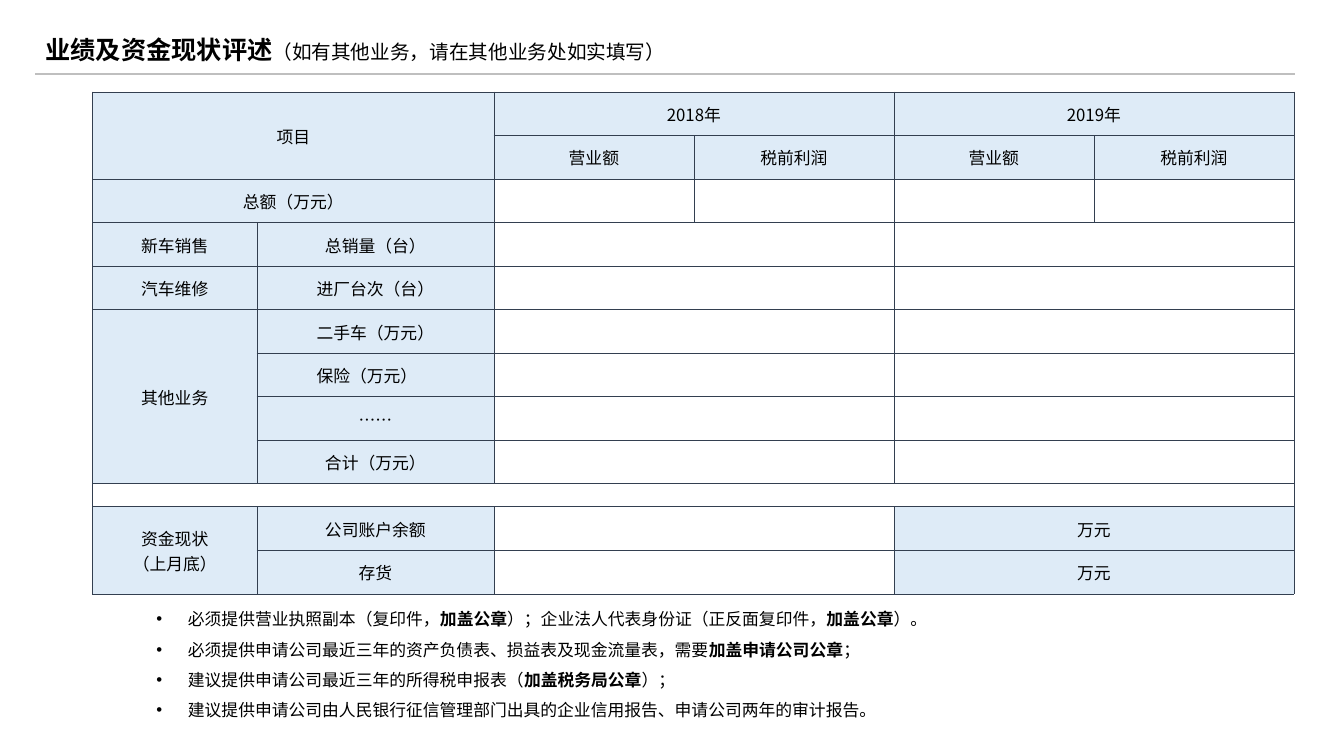
"""Build the slide on business results and funds."""
from typing import Any, NamedTuple

from lxml.etree import SubElement
from pptx import Presentation
from pptx.dml.color import RGBColor
from pptx.enum.shapes import MSO_CONNECTOR
from pptx.enum.text import MSO_ANCHOR, MSO_AUTO_SIZE, PP_ALIGN
from pptx.oxml.ns import qn
from pptx.util import Pt

LINE = MSO_CONNECTOR.STRAIGHT
MID, TOP = MSO_ANCHOR.MIDDLE, MSO_ANCHOR.TOP
LEFT, MIDDLE = PP_ALIGN.LEFT, PP_ALIGN.CENTER
GROW = MSO_AUTO_SIZE.SHAPE_TO_FIT_TEXT
SCALE = 914400 // 250
FONT = "Noto Sans CJK SC"
HUES = {"text": "000000", "rule": "BFBFBF", "edge": "333F50",
        "label": "DEEBF7", "blank": "FFFFFF"}
COLS = [407, 588] + [496] * 4
ROWS = [108] * 9 + [57] + [108] * 2
GAP = 9


class Part(NamedTuple):
    """A stretch of text in one format."""
    text: str
    bold: bool = False
    size: int = 12


class Label(NamedTuple):
    """A shaded table cell and the grid it spans."""
    row: int
    col: int
    text: str
    down: int = 1
    wide: int = 1


class Box(NamedTuple):
    """A place on the slide in px."""
    left: int
    top: int
    width: int
    height: int


LABELS = [
    Label(0, 0, "项目", 2, 2),
    Label(0, 2, "2018年", 1, 2),
    Label(0, 4, "2019年", 1, 2),
    *(Label(1, col, text) for col, text in
      enumerate(["营业额", "税前利润"] * 2, 2)),
    Label(2, 0, "总额（万元）", 1, 2),
    Label(3, 0, "新车销售"),
    Label(4, 0, "汽车维修"),
    Label(5, 0, "其他业务", 4),
    *(Label(row, 1, text) for row, text in enumerate(
        ["总销量（台）", "进厂台次（台）", "二手车（万元）", "保险（万元）　",
         "……", "合计（万元）"], 3)),
    Label(10, 0, "资金现状\n（上月底）", 2),
    Label(10, 1, "公司账户余额"),
    Label(11, 1, "存货"),
    *(Label(row, 4, "万元", 1, 2) for row in (10, 11)),
]
TITLE = [Part("业绩及资金现状评述", True, 18),
         Part("（如有其他业务，请在其他业务处如实填写）", size=14)]
NOTES = [
    [Part("必须提供营业执照副本（复印件，"), Part("加盖公章", True),
     Part("）；企业法人代表身份证（正反面复印件，"),
     Part("加盖公章", True), Part("）。")],
    [Part("必须提供申请公司最近三年的资产负债表、损益表及现金流量表，需要"),
     Part("加盖申请公司公章", True), Part("；")],
    [Part("建议提供申请公司最近三年的所得税申报表（"),
     Part("加盖税务局公章", True), Part("）；")],
    [Part("建议提供申请公司由人民银行征信管理部门出具的企业信用报告、"
          "申请公司两年的审计报告。")],
]


def emu(px: int) -> int:
    """Turn px into EMU."""
    return px * SCALE


def style(item: Any, **form: Any) -> None:
    """Set each format value on an item."""
    for name, value in form.items():
        setattr(item, name, value)


def write(para: Any, parts: list[Part]) -> None:
    """Add formatted runs to a paragraph."""
    for part in parts:
        run = para.add_run()
        run.text = part.text
        style(run.font, name=FONT, size=Pt(part.size), bold=part.bold)
        run.font.color.rgb = RGBColor.from_string(HUES["text"])
        SubElement(run.font._element, qn("a:ea"), typeface=FONT)


def place(shape: Any, box: Box, anchor: Any) -> Any:
    """Move a placeholder and return its text frame."""
    style(shape, **{name: emu(px) for name, px in box._asdict().items()})
    frame = shape.text_frame
    style(frame, word_wrap=True, vertical_anchor=anchor, auto_size=GROW)
    return frame


def list_notes(frame: Any) -> None:
    """Fill the bulleted list."""
    for num, parts in enumerate(NOTES):
        para = frame.add_paragraph() if num else frame.paragraphs[0]
        style(para, level=1, alignment=LEFT, line_spacing=1.5,
              space_before=Pt(0), space_after=Pt(0))
        props = para._p.get_or_add_pPr()
        props.set("marL", str(emu(203)))
        props.set("indent", str(emu(-78)))
        SubElement(props, qn("a:buFont"), typeface="Arial")
        SubElement(props, qn("a:buChar"), char="•")
        write(para, parts)


def fill_cell(cell: Any, hue: str) -> None:
    """Give a cell its fill, edges and margins."""
    style(cell, vertical_anchor=MID, margin_left=emu(2), margin_right=emu(2),
          margin_top=emu(2), margin_bottom=0)
    props = cell._tc.get_or_add_tcPr()
    for side in "LRTB":
        edge = SubElement(props, qn(f"a:ln{side}"), w=str(Pt(0.5)))
        fill = SubElement(edge, qn("a:solidFill"))
        SubElement(fill, qn("a:srgbClr"), val=HUES["edge"])
    cell.fill.solid()
    cell.fill.fore_color.rgb = RGBColor.from_string(HUES[hue])


def add_grid(slide: Any) -> None:
    """Draw the table of results and funds."""
    box = Box(230, 228, sum(COLS), sum(ROWS))
    table = slide.shapes.add_table(
        len(ROWS), len(COLS), *map(emu, box)).table
    style(table, first_row=False, horz_banding=False)
    for col, width in zip(table.columns, COLS):
        col.width = emu(width)
    for row, height in zip(table.rows, ROWS):
        row.height = emu(height)
    spots = {(lab.row + down, lab.col + wide) for lab in LABELS
             for down in range(lab.down) for wide in range(lab.wide)}
    for row in range(len(ROWS)):
        for col in range(len(COLS)):
            cell = table.cell(row, col)
            fill_cell(cell, "label" if (row, col) in spots else "blank")
            if (row, col) not in spots:
                para = cell.text_frame.paragraphs[0]
                SubElement(para._p, qn("a:endParaRPr"), sz="800")
    for lab in LABELS:
        cell = table.cell(lab.row, lab.col)
        if lab.down * lab.wide > 1:
            cell.merge(table.cell(lab.row + lab.down - 1,
                                  lab.col + lab.wide - 1))
        for num, text in enumerate(lab.text.split("\n")):
            frame = cell.text_frame
            para = frame.add_paragraph() if num else frame.paragraphs[0]
            para.alignment = MIDDLE
            write(para, [Part(text)])
    table.cell(GAP, 0).merge(table.cell(GAP, len(COLS) - 1))
    for row in range(3, len(ROWS)):
        for col in (2, 4):
            if row != GAP and (row, col) not in spots:
                table.cell(row, col).merge(table.cell(row, col + 1))


def add_rule(slide: Any) -> None:
    """Draw the rule under the title."""
    rule = slide.shapes.add_connector(LINE, *map(emu, (88, 183, 3212, 183)))
    rule.line.width = Pt(1.5)
    rule.line.color.rgb = RGBColor.from_string(HUES["rule"])
    SubElement(rule._element.spPr, qn("a:effectLst"))


def main() -> None:
    """Build and save the slide."""
    deck = Presentation()
    style(deck, slide_width=emu(3333), slide_height=emu(1875))
    slide = deck.slides.add_slide(deck.slide_layouts[1])
    title, body = slide.placeholders
    frame = place(title, Box(88, 73, 2358, 100), TOP)
    frame.paragraphs[0].alignment = LEFT
    write(frame.paragraphs[0], TITLE)
    list_notes(place(body, Box(238, 1473, 2305, 328), TOP))
    add_rule(slide)
    add_grid(slide)
    deck.save("out.pptx")


if __name__ == "__main__":
    main()
